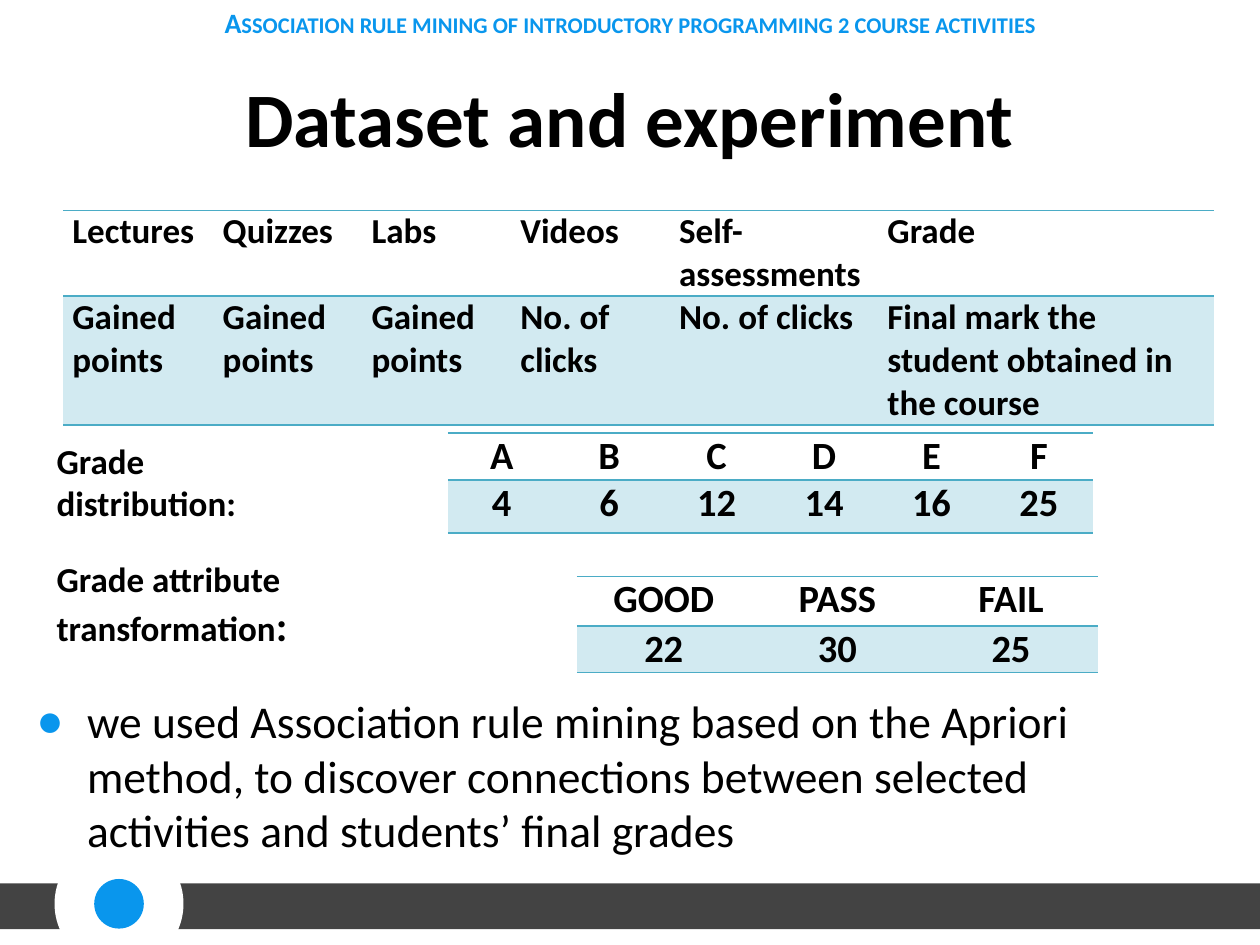
from dataclasses import dataclass

from lxml.etree import SubElement
from pptx import Presentation
from pptx.dml.color import RGBColor
from pptx.enum.shapes import MSO_SHAPE
from pptx.enum.text import MSO_ANCHOR, MSO_AUTO_SIZE, PP_ALIGN
from pptx.oxml.ns import qn
from pptx.util import Cm, Pt


@dataclass(frozen=True)
class Theme:
    font: str = "Calibri"
    black: str = "000000"
    white: str = "FFFFFF"
    blue: str = "0996ED"
    dark: str = "434343"
    rule: str = "4BACC6"
    band: str = "D2EAF1"
    title: int = 44
    body: int = 26
    large: int = 24
    grade: int = 22
    label: int = 20
    head: int = 16


THEME = Theme()


def place_front(shape, box):
    shape.left, shape.top, shape.width, shape.height = map(Cm, box)
    node = shape._element
    node.getparent().append(node)


def style(part, size, color=THEME.black, bold=True, align=PP_ALIGN.LEFT):
    part.alignment = align
    for run in part.runs:
        font = run.font
        font.name, font.size, font.bold = THEME.font, Pt(size), bold
        font.color.rgb = RGBColor.from_string(color)


def draw_shape(slide, kind, box, color):
    shape = slide.shapes.add_shape(kind, *map(Cm, box))
    shape.shadow.inherit = False
    shape.fill.solid()
    shape.fill.fore_color.rgb = RGBColor.from_string(color)
    shape.line.fill.background()


def add_footer(slide, box):
    left, top, width, height = box
    for start, end in ((0, 1.3), (3.5, width)):
        bar = (left + start, top, end - start, height)
        draw_shape(slide, MSO_SHAPE.RECTANGLE, bar, THEME.dark)
    mid_x, mid_y = left + 2.4, top + 0.41
    for size, color in ((2.6, THEME.white), (1, THEME.blue)):
        disc = (mid_x - size / 2, mid_y - size / 2, size, size)
        draw_shape(slide, MSO_SHAPE.OVAL, disc, color)


def add_title(slide, box, text):
    title = slide.shapes.title
    place_front(title, box)
    frame = title.text_frame
    frame.text = text
    frame.vertical_anchor = MSO_ANCHOR.MIDDLE
    style(frame.paragraphs[0], THEME.title, align=PP_ALIGN.CENTER)


def add_body(slide, box, text):
    body = slide.placeholders[1]
    place_front(body, box)
    frame = body.text_frame
    frame.text = text
    frame.auto_size = MSO_AUTO_SIZE.NONE
    part = frame.paragraphs[0]
    style(part, THEME.body, bold=False)
    props = part._p.get_or_add_pPr()
    props.set("marL", str(Cm(1.5)))
    props.set("indent", str(Cm(-1.02)))
    color = SubElement(props, qn("a:buClr"))
    SubElement(color, qn("a:srgbClr"), val=THEME.blue)
    SubElement(props, qn("a:buChar"), char="●")


def add_text(slide, box, text):
    shape = slide.shapes.add_textbox(*map(Cm, box))
    frame = shape.text_frame
    frame.word_wrap = True
    frame.text = text
    return frame


def add_label(slide, box, text, colon):
    part = add_text(slide, box, text).paragraphs[0]
    part.add_run().text = ":"
    style(part, THEME.label)
    part.runs[-1].font.size = Pt(colon)


def add_header(slide, box, text):
    frame = add_text(slide, box, text)
    frame.vertical_anchor = MSO_ANCHOR.MIDDLE
    part = frame.paragraphs[0]
    style(part, THEME.head, THEME.blue, align=PP_ALIGN.CENTER)
    part.runs[0].font._element.set("cap", "small")


def set_rules(cell):
    props = cell._tc.get_or_add_tcPr()
    for side in "LRTB":
        line = SubElement(props, qn(f"a:ln{side}"), w=str(Pt(1)))
        if side in "LR":
            SubElement(line, qn("a:noFill"))
        else:
            fill = SubElement(line, qn("a:solidFill"))
            SubElement(fill, qn("a:srgbClr"), val=THEME.rule)


def add_grid(slide, box, rows, widths, heights, size, align):
    frame = slide.shapes.add_table(len(rows), len(widths), *map(Cm, box))
    table = frame.table
    table.first_row = table.horz_banding = False
    for col, width in zip(table.columns, widths):
        col.width = Cm(width)
    for row, height, words in zip(table.rows, heights, rows):
        row.height = Cm(height)
        for cell, word in zip(row.cells, words):
            cell.margin_left = cell.margin_right = Cm(0.19)
            cell.margin_top = cell.margin_bottom = 0
            cell.text_frame.text = word
            style(cell.text_frame.paragraphs[0], size, align=align)
            set_rules(cell)
            if words is rows[0]:
                cell.fill.background()
            else:
                cell.fill.solid()
                cell.fill.fore_color.rgb = RGBColor.from_string(THEME.band)


def add_fields(slide, box):
    rows = (
        ("Lectures", "Quizzes", "Labs", "Videos", "Self-assessments", "Grade"),
        ("Gained points",) * 3 + ("No. of clicks",) * 2
        + ("Final mark the student obtained in the course",),
    )
    widths = (3.03, 3, 3, 3.2, 4.2, 6.78)
    add_grid(slide, box, rows, widths, (1.73, 2.6), THEME.label, PP_ALIGN.LEFT)


def add_counts(slide, box, heads, counts, heights):
    widths = [box[2] / len(heads)] * len(heads)
    add_grid(slide, box, (heads, counts), widths, heights, THEME.grade, PP_ALIGN.CENTER)


def main():
    deck = Presentation()
    deck.slide_width, deck.slide_height = Cm(25.4), Cm(19.05)
    slide = deck.slides.add_slide(deck.slide_layouts[1])
    add_footer(slide, (0, 17.81, 25.4, 0.92))
    add_title(slide, (1.27, 0.76, 22.86, 3.18), "Dataset and experiment")
    add_fields(slide, (1.27, 4.24, 23.21, 4.33))
    add_counts(slide, (9.03, 8.73, 13, 2), "ABCDEF",
               ("4", "6", "12", "14", "16", "25"), (0.93, 1.07))
    add_label(slide, (0.89, 8.73, 5.3, 1.8), "Grade distribution", THEME.label)
    add_counts(slide, (11.63, 11.62, 10.5, 1.93), ("GOOD", "PASS", "FAIL"),
               ("22", "30", "25"), (1, 0.93))
    add_label(slide, (0.89, 11.11, 8.5, 2), "Grade attribute transformation", THEME.large)
    add_body(slide, (0, 13.85, 24.4, 3.78),
             "we used Association rule mining based on the Apriori method, to discover "
             "connections between selected activities and students’ final grades")
    add_header(slide, (0.3, 0, 24.8, 0.92),
               "Association rule mining of introductory programming 2 course activities")
    deck.save("out.pptx")


if __name__ == "__main__":
    main()
